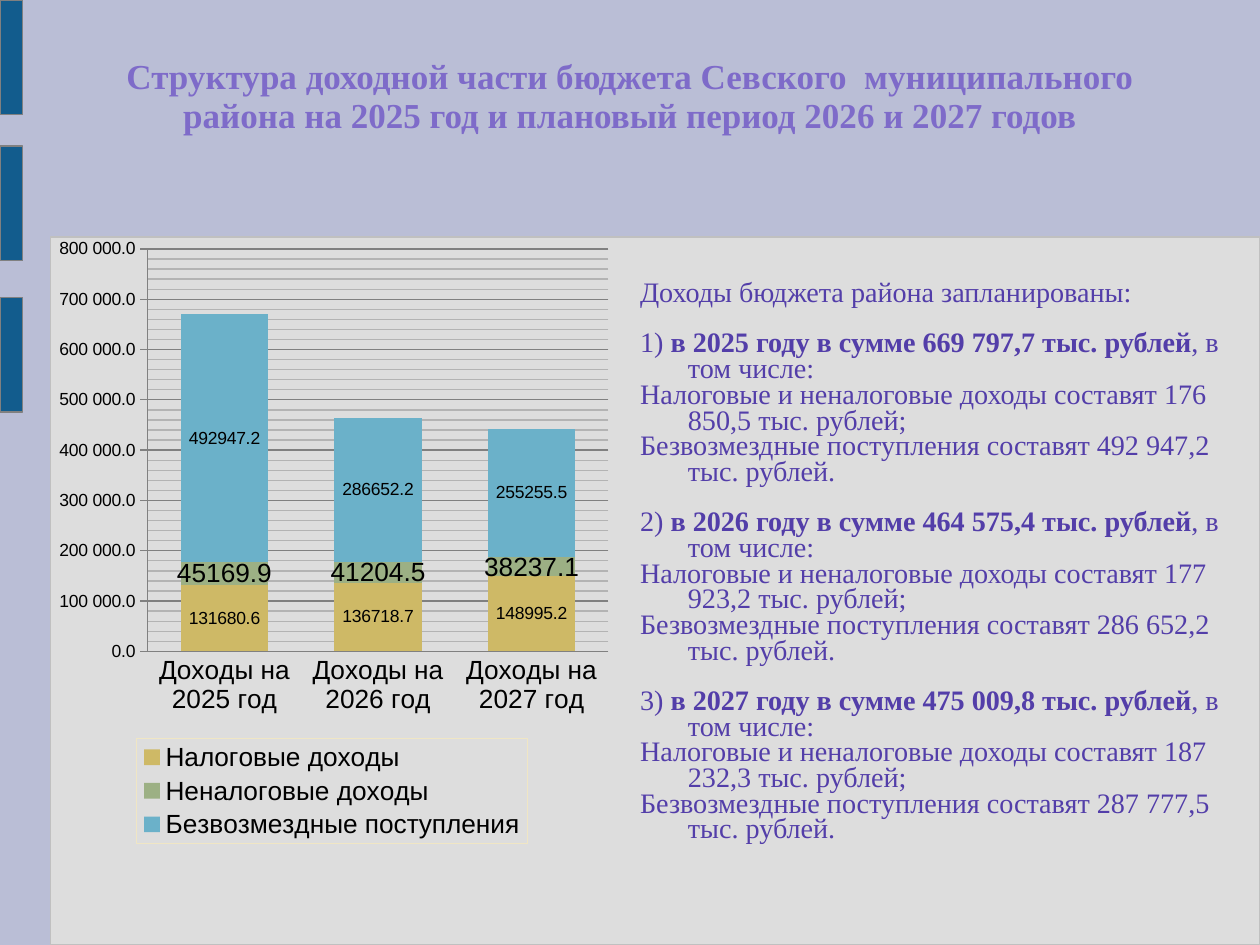
from lxml import etree
from pptx import Presentation
from pptx.chart.data import CategoryChartData
from pptx.dml.color import RGBColor
from pptx.enum.chart import XL_CHART_TYPE as ChartType, XL_LEGEND_POSITION as LegendPosition
from pptx.enum.chart import XL_TICK_MARK as TickMark
from pptx.enum.shapes import MSO_SHAPE as ShapeType
from pptx.enum.text import MSO_ANCHOR as Anchor, PP_ALIGN as Align
from pptx.oxml.ns import qn
from pptx.util import Inches, Pt

COLORS = {
    "background": "BABED6", "panel": "DDDDDD", "panel_line": "C0C0C0",
    "bar": "125C8D", "gray": "808080", "minor_grid": "B3B3B3",
    "title": "7E6BC9", "body": "533EA9", "black": "000000",
    "tax": "CEB966", "non_tax": "9CB084", "transfers": "6BB1C9",
    "legend_line": "F0E6C4",
}
SERIF = "Times New Roman"


def rgb(name):
    return RGBColor.from_string(COLORS[name])


def set_layout(element, x, y, width, height, inner=False):
    """Place a chart part by fractions of the chart area."""
    for old in element.findall(qn("c:layout")):
        element.remove(old)
    layout = etree.Element(qn("c:layout"))
    manual = etree.SubElement(layout, qn("c:manualLayout"))
    settings = [("layoutTarget", "inner")] if inner else []
    settings += [("xMode", "edge"), ("yMode", "edge"),
                 ("x", x), ("y", y), ("w", width), ("h", height)]
    for tag, value in settings:
        etree.SubElement(manual, qn(f"c:{tag}")).set("val", str(value))
    position = element.find(qn("c:legendPos"))
    element.insert(0 if position is None else 1, layout)


presentation = Presentation()
presentation.slide_width, presentation.slide_height = Inches(10), Inches(7.5)
slide = presentation.slides.add_slide(presentation.slide_layouts[5])
slide.background.fill.solid()
slide.background.fill.fore_color.rgb = rgb("background")

# Panel and the three bars on the left edge
blocks = [(0.4, 1.88, 9.6, 5.62, "panel", "panel_line")]
blocks += [(0, top, 0.18, 0.91, "bar", "gray") for top in (0, 1.16, 2.36)]
for left, top, width, height, fill, line in blocks:
    shape = slide.shapes.add_shape(ShapeType.ROUNDED_RECTANGLE, Inches(left), Inches(top),
                                   Inches(width), Inches(height))
    shape.adjustments[0] = 0
    shape.shadow.inherit = False
    shape.fill.solid()
    shape.fill.fore_color.rgb = rgb(fill)
    shape.line.color.rgb = rgb(line)
    shape.line.width = Pt(0.75)

# Title
title = slide.shapes.title
title.left, title.top, title.width, title.height = (
    Inches(0.73), Inches(0), Inches(8.54), Inches(1.55))
frame = title.text_frame
frame.text = ("Структура доходной части бюджета Севского  муниципального района "
              "на 2025 год и плановый период 2026 и 2027 годов")
frame.word_wrap = True
frame.vertical_anchor = Anchor.MIDDLE
frame.margin_left = frame.margin_top = frame.margin_right = frame.margin_bottom = 0
paragraph = frame.paragraphs[0]
paragraph.alignment = Align.CENTER
paragraph.line_spacing = 0.93
font = paragraph.runs[0].font
font.name, font.size, font.bold = SERIF, Pt(20), True
font.color.rgb = rgb("title")

# Revenue chart
series_data = [
    ("Налоговые доходы", (131680.6, 136718.7, 148995.2), "tax", 10),
    ("Неналоговые доходы", (45169.9, 41204.5, 38237.1), "non_tax", 15),
    ("Безвозмездные поступления", (492947.2, 286652.2, 255255.5), "transfers", 10),
]
chart_data = CategoryChartData()
chart_data.categories = [f"Доходы на {year} год" for year in (2025, 2026, 2027)]
for name, values, color, label_size in series_data:
    chart_data.add_series(name, values)
chart = slide.shapes.add_chart(ChartType.COLUMN_STACKED, Inches(0.35), Inches(1.78),
                               Inches(4.57), Inches(4.92), chart_data).chart
chart.has_title = False
chart.font.name, chart.font.size = "Arial", Pt(18)
chart.font.color.rgb = rgb("black")
plot = chart.plots[0]
plot.gap_width, plot.overlap = 75, 100
plot.vary_by_categories = False
for series, (name, values, color, label_size) in zip(plot.series, series_data):
    series.format.fill.solid()
    series.format.fill.fore_color.rgb = rgb(color)
    labels = series.data_labels
    labels.show_value = True
    labels.font.size = Pt(label_size)
    labels.font.name = "Arial"
    labels.font.color.rgb = rgb("black")

# Axes and gridlines
category_axis, value_axis = chart.category_axis, chart.value_axis
category_axis.major_tick_mark = TickMark.NONE
category_axis.tick_labels.font.size = Pt(15)
value_axis.minimum_scale, value_axis.maximum_scale = 0, 800000
value_axis.major_unit, value_axis.minor_unit = 100000, 20000
value_axis.major_tick_mark = TickMark.OUTSIDE
value_axis.tick_labels.font.size = Pt(10)
value_axis.tick_labels.number_format = r"#\ ##0.0"
value_axis.tick_labels.number_format_is_linked = False
value_axis.has_major_gridlines = value_axis.has_minor_gridlines = True
for part in (category_axis, value_axis, value_axis.major_gridlines):
    part.format.line.color.rgb = rgb("gray")
    part.format.line.width = Pt(0.75)

# Legend
chart.has_legend = True
legend = chart.legend
legend.position = LegendPosition.BOTTOM
legend.include_in_layout = False
legend.font.size = Pt(15)

# Lines of the minor gridlines and the legend frame
legend_element = legend._element
chart_space = chart._chartSpace
minor_properties = etree.SubElement(next(chart_space.iter(qn("c:minorGridlines"))), qn("c:spPr"))
legend_properties = etree.Element(qn("c:spPr"))
legend_element.find(qn("c:txPr")).addprevious(legend_properties)
for properties, color in ((minor_properties, "minor_grid"), (legend_properties, "legend_line")):
    line = etree.SubElement(properties, qn("a:ln"), w=str(Pt(0.75)))
    line_fill = etree.SubElement(line, qn("a:solidFill"))
    etree.SubElement(line_fill, qn("a:srgbClr"), val=COLORS[color])

# Placement inside the chart
set_layout(legend_element, 0.16, 0.83, 0.68, 0.17)
set_layout(next(chart_space.iter(qn("c:plotArea"))), 0.18, 0.04, 0.8, 0.65, inner=True)

# Explanation: each paragraph is a list of (text, bold)
years = [
    (2025, "669 797,7", "176 850,5", "492 947,2"),
    (2026, "464 575,4", "177 923,2", "286 652,2"),
    (2027, "475 009,8", "187 232,3", "287 777,5"),
]
lines = [[("Доходы бюджета района запланированы:", False)]]
for number, (year, total, own, transfers) in enumerate(years, 1):
    lines += [
        [(f"{number}) ", False), (f"в {year} году в сумме {total} тыс. рублей", True),
         (", в том числе:", False)],
        [(f"Налоговые и неналоговые доходы составят {own} тыс. рублей;", False)],
        [(f"Безвозмездные поступления составят {transfers} тыс. рублей.", False)],
    ]
frame = slide.shapes.add_textbox(Inches(5.08), Inches(1.78), Inches(4.72), Inches(4.92)).text_frame
frame.word_wrap = True
frame.margin_left = frame.margin_right = frame.margin_bottom = 0
frame.margin_top = Inches(0.46)
for index, parts in enumerate(lines):
    paragraph = frame.paragraphs[0] if index == 0 else frame.add_paragraph()
    paragraph.line_spacing = 0.76
    paragraph.space_before = Pt(14 if index % 3 == 1 else 0)
    indent = paragraph._p.get_or_add_pPr()
    indent.set("marL", str(Inches(0.38)))
    indent.set("indent", str(Inches(-0.38)))
    for text, bold in parts:
        run = paragraph.add_run()
        run.text = text
        run.font.name, run.font.size, run.font.bold = SERIF, Pt(16.1), bold
        run.font.color.rgb = rgb("body")

presentation.save("out.pptx")
